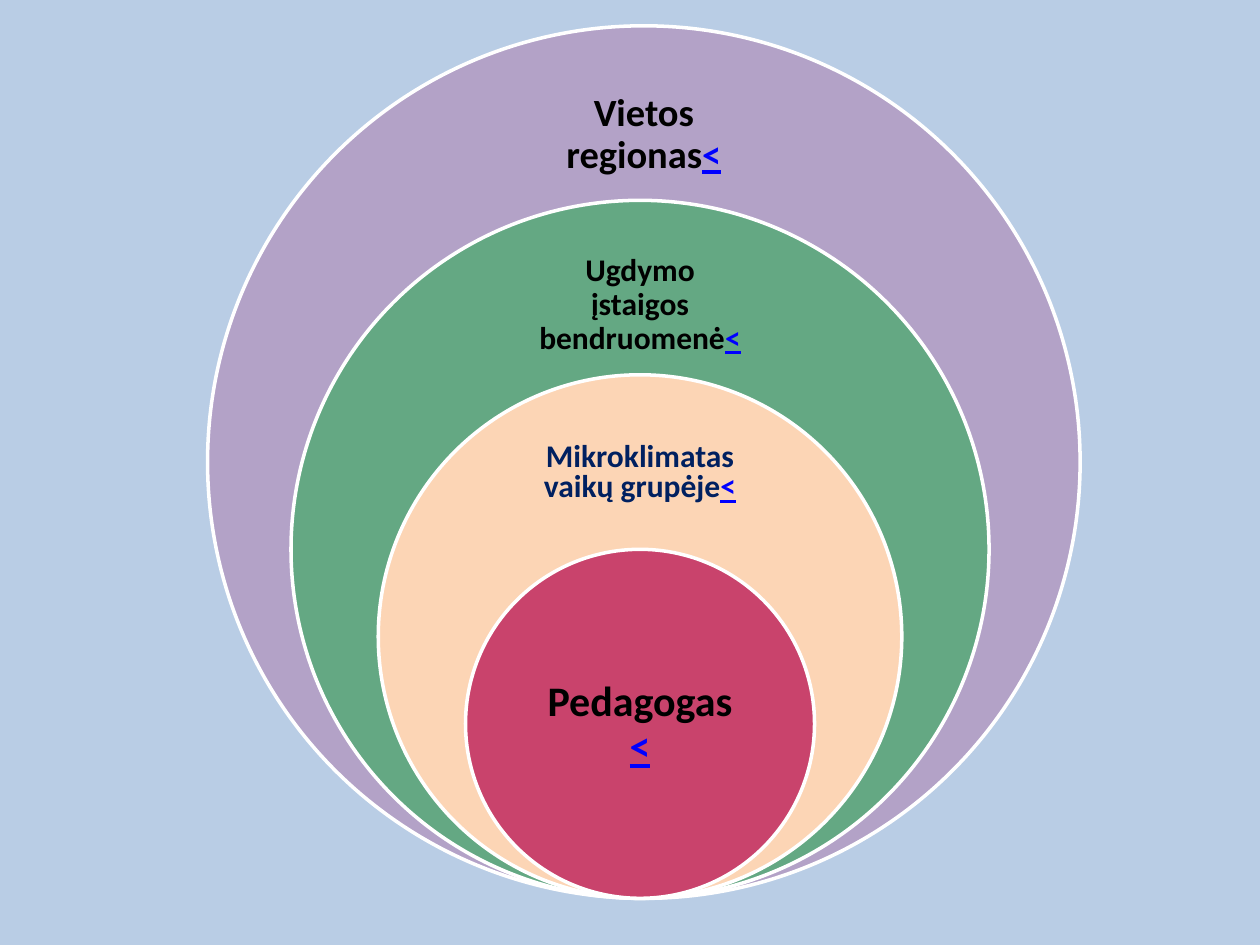
from dataclasses import dataclass

from pptx import Presentation
from pptx.dml.color import RGBColor
from pptx.enum import shapes, text
from pptx.util import Inches, Pt

COLOURS = {
    "background": "B9CDE5",
    "region": "B3A2C7",
    "community": "64A883",
    "group": "FCD5B5",
    "teacher": "C9436C",
    "outline": "FFFFFF",
    "black": "000000",
    "navy": "002060",
    "link": "0000FF",
}
BOTTOM = 7.13
INNER_DIAMETER = 2.77


@dataclass
class Ring:
    label: str
    fill: str
    scale: float
    label_top: float
    label_height: float
    size: int
    inset: float
    centre: float = 5.08
    label_width: float = 1.94
    spacing: float = 0.9
    colour: str = "black"


RINGS = [
    Ring("Vietos regionas", "region", 2.5, 0.55, 1.04, 22, 0.17, centre=5.11),
    Ring("Ugdymo įstaigos bendruomenė", "community", 2, 1.92, 1, 18, 0.14),
    Ring("Mikroklimatas vaikų grupėje", "group", 1.5, 3.29, 0.94, 18, 0.14,
         spacing=0.8, colour="navy"),
    Ring("Pedagogas ", "teacher", 1, 5.06, 1.39, 24, 0.19, label_width=1.96),
]


def rgb(name: str) -> RGBColor:
    return RGBColor.from_string(COLOURS[name])


def add_run(paragraph, wording: str, *, size: int, colour: str,
            underline: bool = False) -> None:
    run = paragraph.add_run()
    run.text = wording
    run.font.name = "Calibri"
    run.font.size = Pt(size)
    run.font.bold = True
    run.font.underline = underline
    run.font.color.rgb = rgb(colour)


def draw_circle(slide, ring: Ring) -> None:
    diameter = INNER_DIAMETER * ring.scale
    circle = slide.shapes.add_shape(
        shapes.MSO_SHAPE.OVAL, Inches(ring.centre - diameter / 2),
        Inches(BOTTOM - diameter), Inches(diameter), Inches(diameter))
    circle.shadow.inherit = False
    circle.fill.solid()
    circle.fill.fore_color.rgb = rgb(ring.fill)
    circle.line.color.rgb = rgb("outline")
    circle.line.width = Pt(2)


def draw_label(slide, ring: Ring) -> None:
    label = slide.shapes.add_textbox(
        Inches(ring.centre - ring.label_width / 2), Inches(ring.label_top),
        Inches(ring.label_width), Inches(ring.label_height))
    frame = label.text_frame
    frame.word_wrap = True
    frame.vertical_anchor = text.MSO_ANCHOR.MIDDLE
    frame.margin_left = frame.margin_right = Inches(ring.inset)
    frame.margin_top = frame.margin_bottom = Inches(ring.inset)
    paragraph = frame.paragraphs[0]
    paragraph.alignment = text.PP_ALIGN.CENTER
    paragraph.line_spacing = ring.spacing
    add_run(paragraph, ring.label, size=ring.size, colour=ring.colour)
    add_run(paragraph, "<", size=ring.size, colour="link", underline=True)


def main() -> None:
    deck = Presentation()
    deck.slide_width = Inches(10)
    deck.slide_height = Inches(7.5)
    slide = deck.slides.add_slide(deck.slide_layouts[6])
    slide.background.fill.solid()
    slide.background.fill.fore_color.rgb = rgb("background")
    for ring in RINGS:
        draw_circle(slide, ring)
        draw_label(slide, ring)
    deck.save("out.pptx")


if __name__ == "__main__":
    main()
